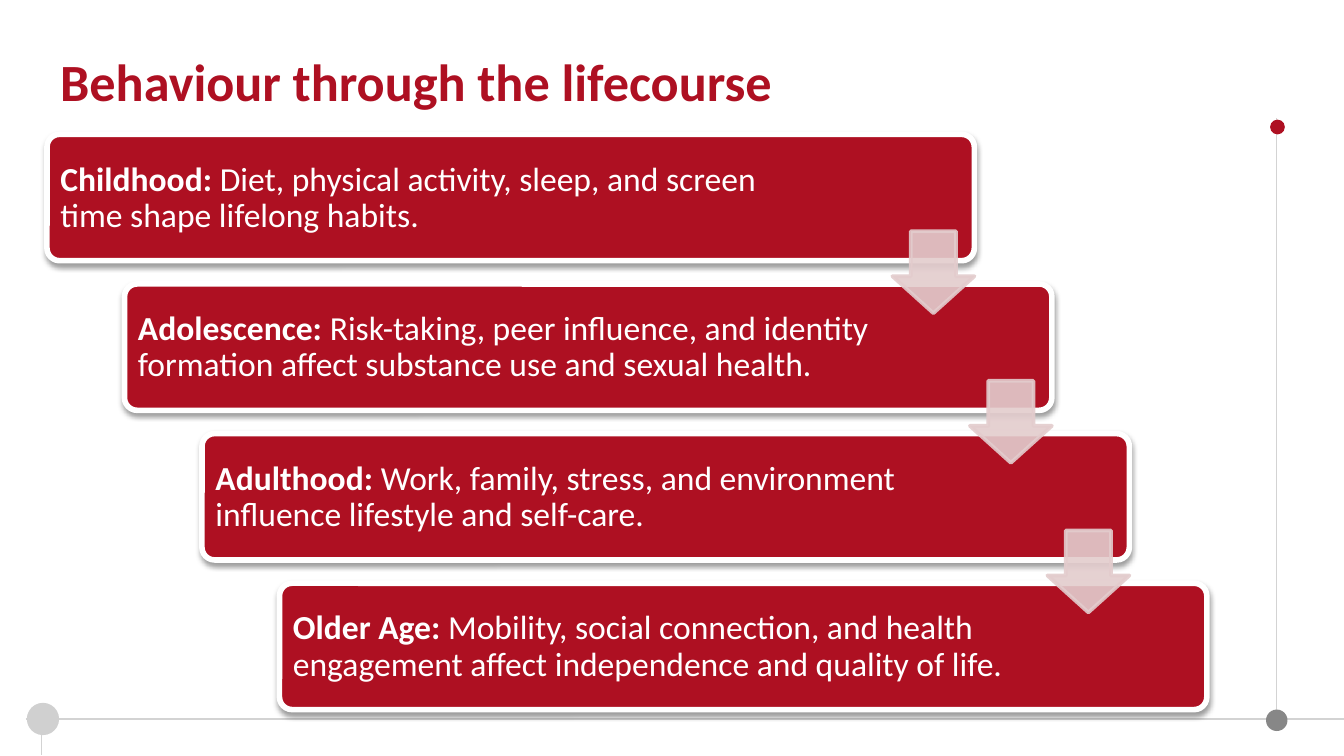
from lxml.etree import SubElement
from pptx import Presentation
from pptx.dml.color import RGBColor
from pptx.enum.shapes import MSO_CONNECTOR, MSO_SHAPE
from pptx.enum.text import MSO_ANCHOR
from pptx.oxml.ns import qn
from pptx.util import Inches, Pt

RED = RGBColor(0xAE, 0x10, 0x22)
PINK = RGBColor(0xE3, 0xCC, 0xCD)
WHITE = RGBColor(0xFF, 0xFF, 0xFF)
RULE = RGBColor(0xD3, 0xD3, 0xD3)
SILVER = RGBColor(0xD0, 0xD0, 0xD0)
GREY = RGBColor(0x87, 0x87, 0x87)

STAGES = [
    ("Childhood:", " Diet, physical activity, sleep, and screen time shape lifelong habits.", 5.8),
    ("Adolescence:", " Risk-taking, peer influence, and identity formation affect substance use and sexual health.", 5.66),
    ("Adulthood:", " Work, family, stress, and environment influence lifestyle and self-care.", 5.66),
    ("Older Age:", " Mobility, social connection, and health engagement affect independence and quality of life.", 5.66),
]
STEP_X = 1.73 / 3
STEP_Y = 3.34 / 3


class SlideBuilder:
    font = "Calibri"

    def __init__(self, slide):
        self.shapes = slide.shapes

    def line(self, x1, y1, x2, y2):
        cn = self.shapes.add_connector(MSO_CONNECTOR.STRAIGHT, *map(Inches, (x1, y1, x2, y2)))
        cn.line.color.rgb = RULE
        cn.line.width = Pt(0.75)
        SubElement(cn._element.spPr, qn("a:effectLst"))

    def shape(self, kind, x, y, w, h, fill, adjustments=()):
        sp = self.shapes.add_shape(kind, *map(Inches, (x, y, w, h)))
        sp.shadow.inherit = False
        sp.fill.solid()
        sp.fill.fore_color.rgb = fill
        sp.line.fill.background()
        for i, value in enumerate(adjustments):
            sp.adjustments[i] = value
        return sp

    def outline(self, sp, color, width):
        sp.line.color.rgb = color
        sp.line.width = Pt(width)

    def dot(self, x, y, size, fill):
        self.shape(MSO_SHAPE.OVAL, x, y, size, size, fill)

    def card(self, x, y):
        sp = self.shape(MSO_SHAPE.ROUNDED_RECTANGLE, x, y, 6.9, 0.94, RED, (0.1,))
        self.outline(sp, WHITE, 3)
        effects = sp._element.spPr.find(qn("a:effectLst"))
        shadow = SubElement(effects, qn("a:outerShdw"), blurRad=str(Pt(3.1)),
                            dist=str(Pt(1.6)), dir="5400000", rotWithShape="0")
        color = SubElement(shadow, qn("a:srgbClr"), val="000000")
        SubElement(color, qn("a:alpha"), val="38000")

    def arrow(self, x, y):
        sp = self.shape(MSO_SHAPE.DOWN_ARROW, x, y, 0.61, 0.61, PINK, (0.55, 0.45))
        self.outline(sp, PINK, 2)
        for color in sp._element.spPr.iter(qn("a:srgbClr")):
            SubElement(color, qn("a:alpha"), val="90000")

    def text(self, x, y, w, h, runs, size, color, insets, anchor):
        tf = self.shapes.add_textbox(*map(Inches, (x, y, w, h))).text_frame
        side, edge = map(Inches, insets)
        frame = {"word_wrap": True, "vertical_anchor": anchor,
                 "margin_left": side, "margin_right": side,
                 "margin_top": edge, "margin_bottom": edge}
        for name, value in frame.items():
            setattr(tf, name, value)
        p = tf.paragraphs[0]
        p.line_spacing = 0.9
        for content, bold in runs:
            r = p.add_run()
            r.text = content
            for name, value in {"name": self.font, "size": Pt(size), "bold": bold}.items():
                setattr(r.font, name, value)
            r.font.color.rgb = color


def main():
    prs = Presentation()
    prs.slide_width = Inches(10)
    prs.slide_height = prs.slide_width * 9 // 16
    s = SlideBuilder(prs.slides.add_slide(prs.slide_layouts[6]))

    s.line(0.19, 5.35, 10.04, 5.35)
    s.line(9.5, 0.88, 9.5, 5.28)
    s.line(0.31, 5.35, 0.31, 5.62)
    s.dot(0.2, 5.23, 0.24, SILVER)
    s.dot(9.42, 5.28, 0.16, GREY)
    s.dot(9.45, 0.89, 0.11, RED)

    s.text(0.35, 0.37, 8.5, 0.45, [("Behaviour through the lifecourse", True)],
           28, RED, (0.1, 0.05), MSO_ANCHOR.TOP)

    for i, (stage, detail, width) in enumerate(STAGES):
        x, y = 0.35 + i * STEP_X, 1 + i * STEP_Y
        s.card(x, y)
        s.text(x + 0.03, y + 0.03, width, 0.89, [(stage, True), (detail, False)],
               18, WHITE, (0.07, 0.07), MSO_ANCHOR.MIDDLE)
    for i in range(len(STAGES) - 1):
        s.arrow(6.64 + i * STEP_X, 1.72 + i * STEP_Y)

    prs.save("out.pptx")


if __name__ == "__main__":
    main()
